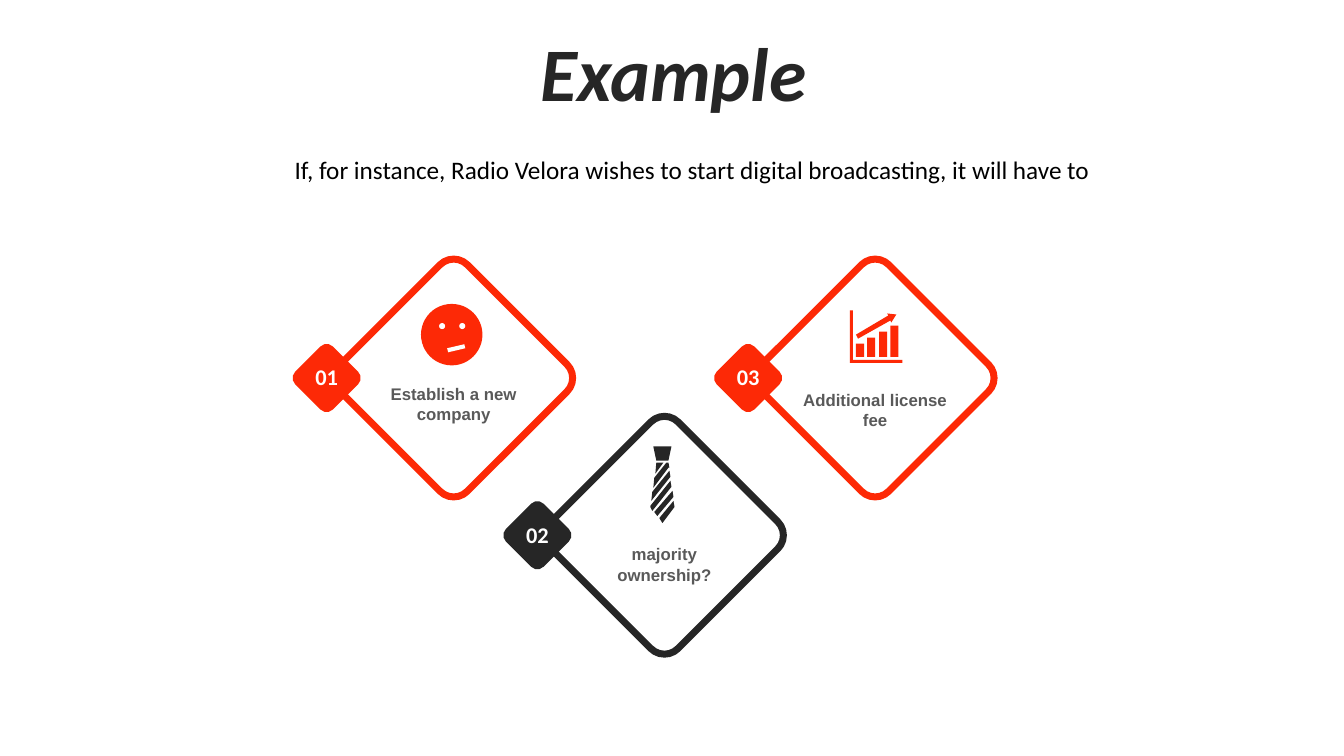
from pptx import Presentation
from pptx.dml.color import RGBColor
from pptx.enum.shapes import MSO_SHAPE
from pptx.enum.text import MSO_ANCHOR, PP_ALIGN
from pptx.util import Inches, Pt

OVAL, ROUND = MSO_SHAPE.OVAL, MSO_SHAPE.ROUNDED_RECTANGLE
TOP, MID, CENTER = MSO_ANCHOR.TOP, MSO_ANCHOR.MIDDLE, PP_ALIGN.CENTER
RED, DARK, GREY, WHITE, BLACK = "FD2906", "262626", "595959", "FFFFFF", "000000"
WIDE, HIGH = 13.33, 7.5
CARD, BADGE = 1.78, 0.53      # sides of the two tilted squares
COL, ROW = 2.09, 1.56         # steps between card centres
LEFT, UPPER = 4.5, 3.75       # centre of the first card

# Icon outlines, in hundredths of an inch from the icon's top left
MOUTH = [[(43, 40), (26, 44), (27, 48), (44, 44)]]
TIE = [
    [(3, 0), (21, 0), (18, 14), (6, 14)],
    [(6, 16), (13, 16), (5, 27)],
    [(16, 16), (18, 16), (19, 21), (18, 21), (3, 41), (4, 31)],
    [(19, 24), (20, 30), (1, 54), (2, 45)],
    [(20, 34), (21, 40), (2, 64), (0, 60), (0, 59)],
    [(22, 44), (23, 50), (7, 69), (4, 65)],
    [(23, 54), (24, 60), (12, 76), (9, 71)],
]
AXES = [(0, 0), (3, 0), (3, 49), (52, 49), (52, 52), (0, 52)]
ARROW = [(37, 3), (46, 4), (41, 12), (40, 10), (8, 28), (6, 24), (38, 5)]


def color(code):
    return RGBColor.from_string(code)


def about(x, y, w, h):
    """Box of size w by h centred on x, y."""
    return x - w / 2, y - h / 2, w, h


def text(slide, box, words, size, font, tint, bold=True, anchor=TOP):
    frame = slide.shapes.add_textbox(*map(Inches, box)).text_frame
    frame.word_wrap = True
    frame.vertical_anchor = anchor
    para = frame.paragraphs[0]
    para.text = words
    para.alignment = CENTER
    para.font.size, para.font.name, para.font.bold = Pt(size), font, bold
    para.font.color.rgb = color(tint)
    return para


def paint(shape, fill, line=None):
    shape.shadow.inherit = False
    shape.fill.solid()
    shape.fill.fore_color.rgb = color(fill)
    if line:
        shape.line.color.rgb = color(line)
        shape.line.width = Pt(5)
    else:
        shape.line.fill.background()


def block(slide, kind, box, fill, line=None):
    shape = slide.shapes.add_shape(kind, *map(Inches, box))
    paint(shape, fill, line)
    return shape


def outline(slide, x, y, loops, fill):
    """Draw closed loops as one shape, with 0, 0 at x, y."""
    first, *rest = loops
    pen = slide.shapes.build_freeform(*first[0], scale=Inches(0.01))
    pen.add_line_segments(first[1:], close=True)
    for loop in rest:
        pen.move_to(*loop[0])
        pen.add_line_segments(loop[1:], close=True)
    paint(pen.convert_to_shape(Inches(x), Inches(y)), fill)


def face(slide, x, y, tint):
    left, top, side, _ = about(x - 0.02, y - 0.43, 0.61, 0.61)
    block(slide, OVAL, (left, top, side, side), tint)
    for eye in (0.21, 0.41):
        block(slide, OVAL, about(left + eye, top + 0.22, 0.06, 0.06), WHITE)
    outline(slide, left, top, MOUTH, WHITE)


def tie(slide, x, y, tint):
    left, top, _, _ = about(x - 0.02, y - 0.5, 0.24, 0.76)
    outline(slide, left, top, TIE, tint)


def graph(slide, x, y, tint):
    left, top, _, _ = about(x + 0.01, y - 0.41, 0.52, 0.52)
    bars = []
    for i in range(4):
        a, b = round(6 + 11.4 * i), 33 - 6 * i
        bars.append([(a, b), (a + 8, b), (a + 8, 46), (a, 46)])
    outline(slide, left, top, [AXES, ARROW, *bars], tint)


def card(slide, x, y, number, words, drop, tint, icon):
    """Tilted square centred on x, y, with badge, icon and caption."""
    frame = block(slide, ROUND, about(x, y, CARD, CARD), WHITE, tint)
    frame.adjustments[0] = 0.107
    side = x - 1.26
    badge = block(slide, ROUND, about(side, y, BADGE, BADGE), tint)
    frame.rotation = badge.rotation = 315
    text(slide, about(side, y - 0.01, 0.52, 0.37), number, 16, "Calibri",
         WHITE, anchor=MID)
    text(slide, (x - 0.85, y + drop, 1.7, 0.5), words, 12, "Arial", GREY)
    icon(slide, x, y, tint)


def header(slide):
    title = text(slide, (0.35, 0.37, 12.66, 0.79), "Example", 54, "Calibri",
                 DARK, anchor=MID)
    title.font.italic = True
    title.line_spacing = 0.9
    title.space_before = Pt(10)
    text(slide, (2.08, 1.48, 9.57, 0.4),
         "If, for instance, Radio Velora wishes to start digital "
         "broadcasting, it will have to", 18, "Calibri", BLACK, bold=False)


def main():
    deck = Presentation()
    deck.slide_width, deck.slide_height = Inches(WIDE), Inches(HIGH)
    slide = deck.slides.add_slide(deck.slide_layouts[6])
    header(slide)
    steps = [
        ("Establish a new company", 0.01, RED, face),
        ("majority ownership?", 0.04, DARK, tie),
        ("Additional license fee", 0.07, RED, graph),
    ]
    for i, step in enumerate(steps):
        card(slide, LEFT + COL * i, UPPER + ROW * (i % 2), f"{i + 1:02}", *step)
    deck.save("out.pptx")


if __name__ == "__main__":
    main()
